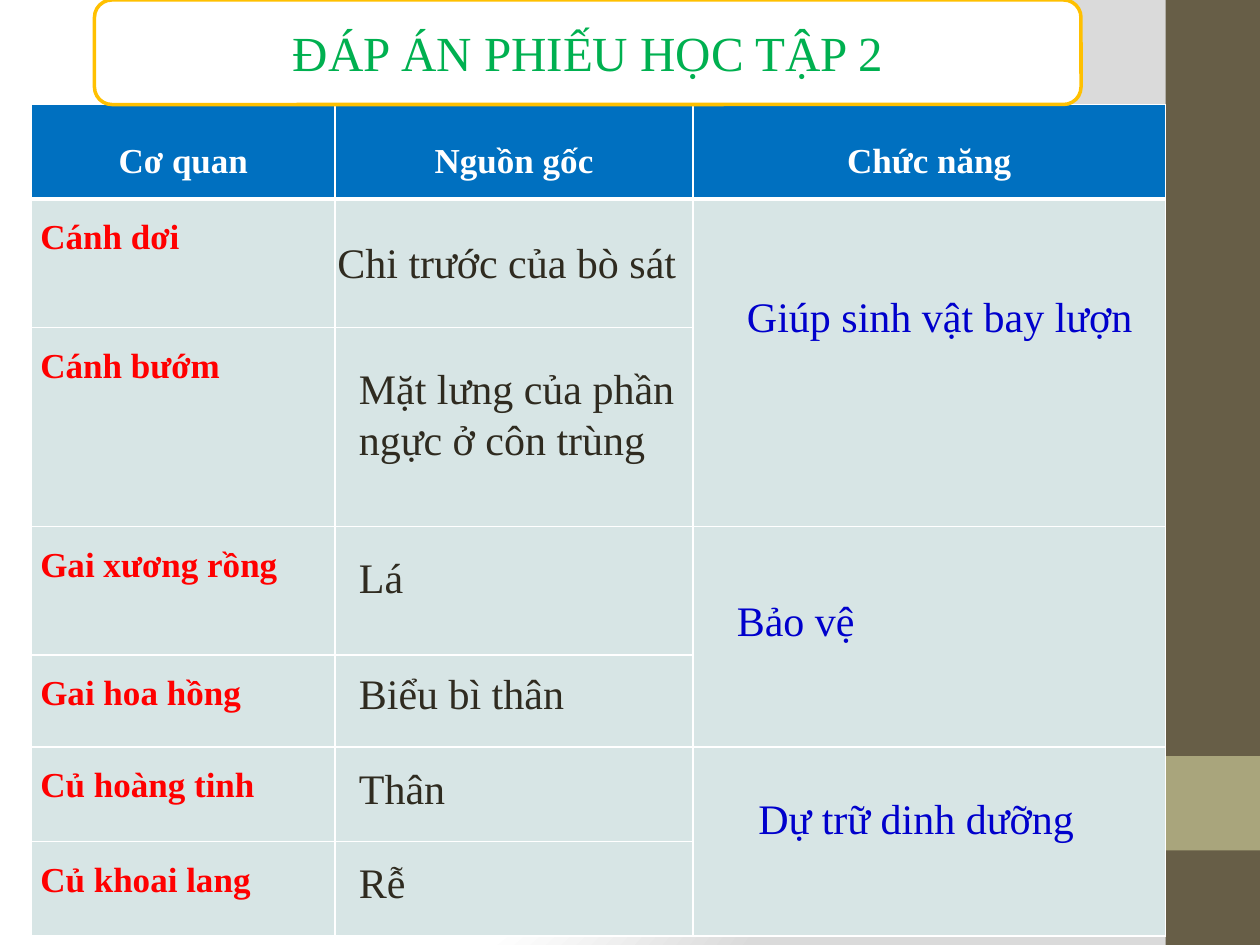
from pptx import Presentation
from pptx.dml.color import RGBColor
from pptx.enum.shapes import MSO_SHAPE
from pptx.enum.text import MSO_ANCHOR, PP_ALIGN
from pptx.oxml import parse_xml
from pptx.oxml.ns import nsdecls
from pptx.util import Inches, Pt

RECTANGLE = MSO_SHAPE.RECTANGLE
ROUNDED_RECTANGLE = MSO_SHAPE.ROUNDED_RECTANGLE
MIDDLE, TOP = MSO_ANCHOR.MIDDLE, MSO_ANCHOR.TOP
CENTER, LEFT = PP_ALIGN.CENTER, PP_ALIGN.LEFT

THEME = {
    "font": "Times New Roman",
    "title_size": 28, "answer_size": 24, "table_size": 20,
    "white": "FFFFFF", "shade": "DADADA",
    "sidebar": "675E47", "sidebar_accent": "A9A57C",
    "header": "0070C0", "body": "D7E5E5",
    "organ": "FF0000", "origin": "2F2B20", "function": "0000CC",
    "title": "00B050", "title_border": "FFC000",
}

TITLE = "ĐÁP ÁN PHIẾU HỌC TẬP 2"
HEADERS = ["Cơ quan", "Nguồn gốc", "Chức năng"]
ORGANS = ["Cánh dơi", "Cánh bướm", "Gai xương rồng", "Gai hoa hồng",
          "Củ hoàng tinh", "Củ khoai lang"]
COLUMN_WIDTHS = [2.41, 2.84, 3.75]
ROW_HEIGHTS = [0.75, 1.02, 1.58, 1.02, 0.73, 0.75, 0.75]
SIDEBAR = [("sidebar", 0, 7.5), ("sidebar_accent", 6, 0.75)]
ANSWERS = [
    ("Chi trước của bò sát", "origin", 2.58, 1.83, 3, 0.51),
    ("Mặt lưng của phần ngực ở côn trùng", "origin", 2.75, 2.83, 2.83, 0.91),
    ("Lá", "origin", 2.75, 4.33, 2.75, 0.51),
    ("Biểu bì thân", "origin", 2.75, 5.25, 2.75, 0.51),
    ("Thân", "origin", 2.75, 6, 2.75, 0.51),
    ("Rễ", "origin", 2.75, 6.75, 2.75, 0.51),
    ("Giúp sinh vật bay lượn", "function", 5.83, 2.26, 3.33, 0.51),
    ("Bảo vệ", "function", 5.75, 4.67, 3.33, 0.51),
    ("Dự trữ dinh dưỡng", "function", 5.92, 6.24, 3.33, 0.51),
]


def color(name):
    return RGBColor.from_string(THEME[name])


def write(frame, text, size, color_name, alignment=LEFT, bold=False):
    paragraph = frame.paragraphs[0]
    paragraph.text = text
    paragraph.alignment = alignment
    paragraph.font.name = THEME["font"]
    paragraph.font.size = Pt(THEME[size])
    paragraph.font.bold = bold
    paragraph.font.color.rgb = color(color_name)
    return paragraph


def set_background(slide):
    stops = "".join(
        f'<a:gs pos="{position * 1000}"><a:srgbClr val="{THEME[name]}"/></a:gs>'
        for position, name in [(0, "white"), (75, "white"), (100, "shade")])
    slide.element.cSld.insert(0, parse_xml(
        f'<p:bg {nsdecls("p", "a")}><p:bgPr><a:gradFill rotWithShape="1">'
        f'<a:gsLst>{stops}</a:gsLst><a:path path="circle">'
        '<a:fillToRect l="20000" t="50000" r="100000" b="50000"/></a:path>'
        '</a:gradFill><a:effectLst/></p:bgPr></p:bg>'))


def add_box(slide, kind, bounds, fill, border=None):
    shape = slide.shapes.add_shape(kind, *map(Inches, bounds))
    shape.shadow.inherit = False
    shape.fill.solid()
    shape.fill.fore_color.rgb = color(fill)
    if border:
        shape.line.color.rgb = color(border)
        shape.line.width = Pt(2)
    else:
        shape.line.fill.background()
    return shape


def set_borders(cell, top, bottom):
    widths = {"lnL": 1, "lnR": 1, "lnT": top, "lnB": bottom}
    properties = cell._tc.get_or_add_tcPr()
    for index, (side, width) in enumerate(widths.items()):
        properties.insert(index, parse_xml(
            f'<a:{side} {nsdecls("a")} w="{Pt(width)}"><a:solidFill>'
            f'<a:srgbClr val="{THEME["white"]}"/></a:solidFill></a:{side}>'))


def add_organ_table(slide):
    frame = slide.shapes.add_table(
        len(ROW_HEIGHTS), len(COLUMN_WIDTHS), Inches(0.25), Inches(0.83),
        Inches(sum(COLUMN_WIDTHS)), Inches(sum(ROW_HEIGHTS)))
    table = frame.table
    for column, width in zip(table.columns, COLUMN_WIDTHS):
        column.width = Inches(width)
    for row, height in zip(table.rows, ROW_HEIGHTS):
        row.height = Inches(height)

    rows = [HEADERS] + [[organ, "", ""] for organ in ORGANS]
    for row_index, texts in enumerate(rows):
        is_header = row_index == 0
        for column_index, text in enumerate(texts):
            cell = table.cell(row_index, column_index)
            cell.fill.solid()
            cell.fill.fore_color.rgb = color("header" if is_header else "body")
            set_borders(cell, 3 if row_index == 1 else 1, 3 if is_header else 1)
            cell.margin_left = cell.margin_right = Inches(0.07)
            cell.margin_top = cell.margin_bottom = 0
            cell.vertical_anchor = MIDDLE if is_header else TOP
            if text:
                paragraph = write(
                    cell.text_frame, text, "table_size",
                    "white" if is_header else "organ",
                    CENTER if is_header else LEFT, True)
                paragraph.line_spacing = 1.5
    for first_row in range(1, len(rows), 2):
        table.cell(first_row, 2).merge(table.cell(first_row + 1, 2))


def main():
    presentation = Presentation()
    presentation.slide_width, presentation.slide_height = Inches(10), Inches(7.5)
    slide = presentation.slides.add_slide(presentation.slide_layouts[6])
    set_background(slide)
    for fill, top, height in SIDEBAR:
        add_box(slide, RECTANGLE, (9.25, top, 0.75, height), fill)
    add_organ_table(slide)
    for text, color_name, *bounds in ANSWERS:
        frame = slide.shapes.add_textbox(*map(Inches, bounds)).text_frame
        frame.word_wrap = True
        write(frame, text, "answer_size", color_name)
    banner = add_box(slide, ROUNDED_RECTANGLE, (0.75, 0, 7.83, 0.83),
                     "white", "title_border")
    banner.text_frame.vertical_anchor = MIDDLE
    write(banner.text_frame, TITLE, "title_size", "title", CENTER)
    presentation.save("out.pptx")


if __name__ == "__main__":
    main()
